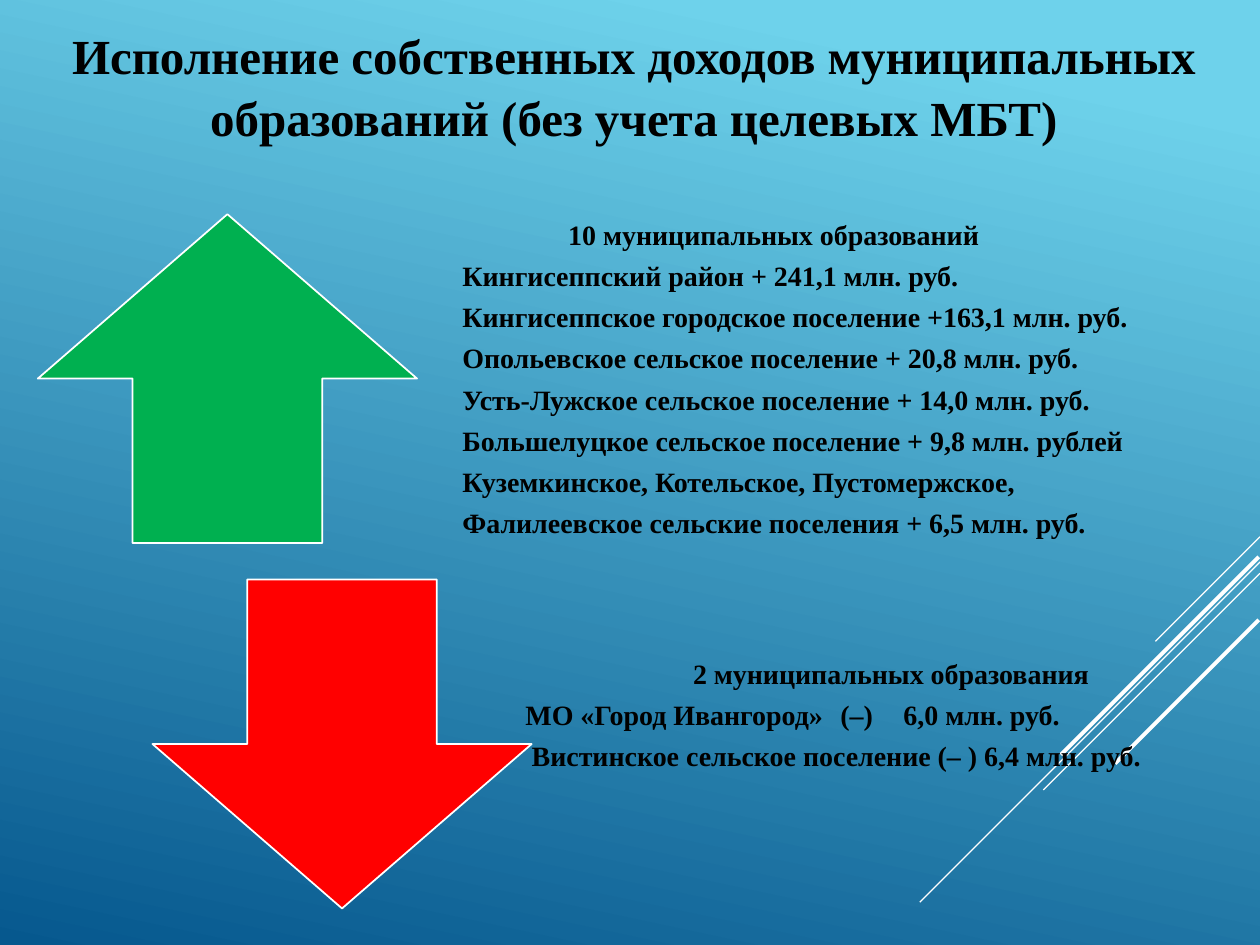
from lxml.etree import SubElement
from pptx import Presentation
from pptx.dml.color import RGBColor
from pptx.enum.shapes import MSO_CONNECTOR, MSO_SHAPE
from pptx.enum.text import MSO_ANCHOR, MSO_AUTO_SIZE, PP_ALIGN
from pptx.oxml.ns import qn
from pptx.util import Inches, Pt

SKY = RGBColor(0x6E, 0xD2, 0xEB)
DEEP_BLUE = RGBColor(0x06, 0x58, 0x8E)
WHITE = RGBColor(0xFF, 0xFF, 0xFF)
BLACK = RGBColor(0, 0, 0)
GREEN = RGBColor(0x00, 0xB0, 0x50)
RED = RGBColor(0xFF, 0, 0)

FONT = "Times New Roman"
COLUMNS, ROWS = 100, 75
ARROW_SIZE = (30.1, 26.1)

TITLE = "Исполнение собственных доходов муниципальных образований (без учета целевых МБТ)"
GROWTH = [
    ("10 муниципальных образований", 19.4),
    ("Кингисеппский район + 241,1 млн. руб.", 11),
    ("Кингисеппское городское поселение +163,1 млн. руб.", 11),
    ("Опольевское сельское поселение + 20,8 млн. руб.", 11),
    ("Усть-Лужское сельское поселение + 14,0 млн. руб.", 11),
    ("Большелуцкое сельское поселение + 9,8 млн. рублей", 11),
    ("Куземкинское, Котельское, Пустомержское,", 11),
    ("Фалилеевское сельские поселения + 6,5 млн. руб.", 11),
]
DECLINE = [
    ("2 муниципальных образования", 13.3),
    ("МО «Город Ивангород»\t(–)\t6,0 млн. руб.", 0),
    ("Вистинское сельское поселение (– ) 6,4 млн. руб.", 0.5),
]
DECLINE_TABS = (25.2, 29.5)
RAYS = [
    (100, 42.6, 8.3, 0.75),
    (100, 44.6, 27, 0.75),
    (100, 45.5, 17.2, 0.75),
    (99.9, 44.2, 15.7, 2.25),
    (99.9, 49.2, 11.4, 2.25),
]


class Deck:
    """Builds one slide on a grid of columns and rows."""

    def __init__(self):
        self.presentation = Presentation()
        self.presentation.slide_width = Inches(10)
        self.presentation.slide_height = Inches(7.5)
        self.column = self.presentation.slide_width / COLUMNS
        self.row = self.presentation.slide_height / ROWS
        self.slide = self.presentation.slides.add_slide(self.presentation.slide_layouts[6])

    def x(self, columns):
        return round(columns * self.column)

    def y(self, rows):
        return round(rows * self.row)

    def area(self, left, top, width, height):
        return self.x(left), self.y(top), self.x(width), self.y(height)

    def background(self, start, end, angle):
        fill = self.slide.background.fill
        fill.gradient()
        fill.gradient_angle = 360 - angle
        for stop, color, position in zip(fill.gradient_stops, (start, end), (0.1, 1)):
            stop.color.rgb = color
            stop.position = position

    def ray(self, right, top, reach, weight):
        ray = self.slide.shapes.add_connector(
            MSO_CONNECTOR.STRAIGHT,
            self.x(right), self.y(top), self.x(right - reach), self.y(top + reach))
        ray.line.color.rgb = WHITE
        ray.line.width = Pt(weight)
        SubElement(ray._element.spPr, qn("a:effectLst"))

    def arrow(self, preset, left, top, color):
        arrow = self.slide.shapes.add_shape(preset, *self.area(left, top, *ARROW_SIZE))
        arrow.shadow.inherit = False
        arrow.fill.solid()
        arrow.fill.fore_color.rgb = color
        arrow.line.color.rgb = WHITE
        arrow.line.width = Pt(1)

    def set_paragraph(self, paragraph, text, size, spacing):
        paragraph.text = text
        paragraph.line_spacing = spacing
        for run in paragraph.runs:
            run.font.name = FONT
            run.font.size = Pt(size)
            run.font.bold = True
            run.font.color.rgb = BLACK

    def title(self, text, *area):
        frame = self.slide.shapes.add_textbox(*self.area(*area)).text_frame
        frame.word_wrap = True
        frame.auto_size = MSO_AUTO_SIZE.SHAPE_TO_FIT_TEXT
        self.set_paragraph(frame.paragraphs[0], text, 28, 1.05)
        frame.paragraphs[0].alignment = PP_ALIGN.CENTER

    def results(self, entries, *area, bottom=1.2, tabs=()):
        frame = self.slide.shapes.add_textbox(*self.area(*area)).text_frame
        frame.word_wrap = True
        frame.vertical_anchor = MSO_ANCHOR.MIDDLE
        frame.margin_left = frame.margin_right = self.x(1.2)
        frame.margin_top = 0
        frame.margin_bottom = self.y(bottom)
        for index, (text, indent) in enumerate(entries):
            paragraph = frame.add_paragraph() if index else frame.paragraphs[0]
            self.set_paragraph(paragraph, text, 16, 0.9)
            paragraph.space_after = Pt(6.3)
            properties = paragraph._p.get_or_add_pPr()
            properties.set("marL", str(self.x(indent)))
            properties.set("indent", "0")
            if "\t" in text:
                stops = SubElement(properties, qn("a:tabLst"))
                for tab in tabs:
                    SubElement(stops, qn("a:tab"), pos=str(self.x(tab)), algn="l")


def main():
    deck = Deck()
    deck.background(SKY, DEEP_BLUE, 102)
    for ray in RAYS:
        deck.ray(*ray)
    deck.arrow(MSO_SHAPE.UP_ARROW, 3, 17, GREEN)
    deck.results(GROWTH, 24.5, 16.3, 70.4, 29)
    deck.arrow(MSO_SHAPE.DOWN_ARROW, 12.1, 46, RED)
    deck.results(DECLINE, 40.5, 52, 56.5, 14.1, bottom=4.4, tabs=DECLINE_TABS)
    deck.title(TITLE, 2.8, 1.3, 95, 10.4)
    deck.presentation.save("out.pptx")


if __name__ == "__main__":
    main()
